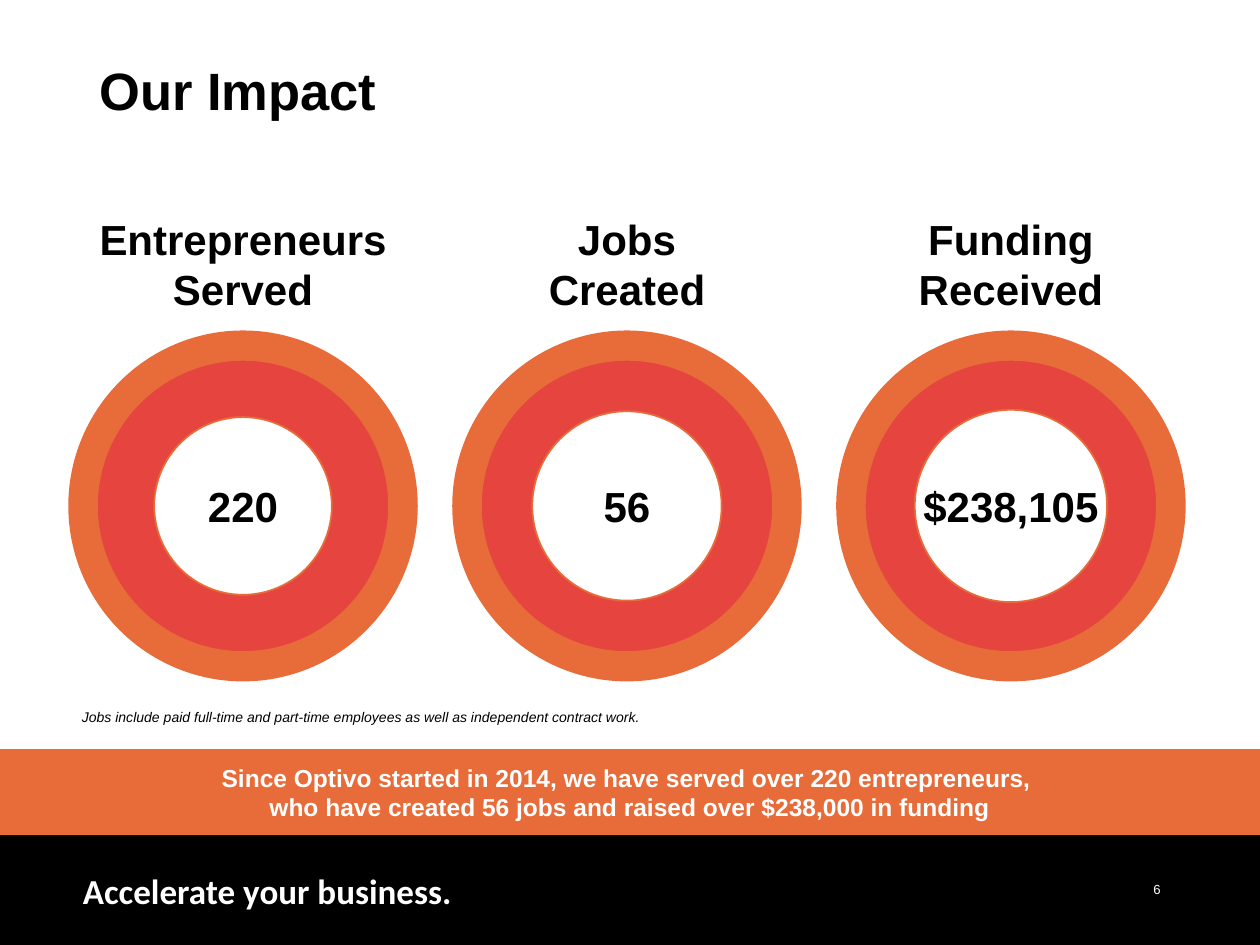
"""Build the "Our Impact" slide with three ring figures."""
from pptx import Presentation
from pptx import util as u
from pptx.dml.color import RGBColor
from pptx.enum import shapes, text

BLACK, WHITE, ORANGE, RED = "000000", "FFFFFF", "E86C39", "E5453E"
LEFT, CENTER, RIGHT = text.PP_ALIGN.LEFT, text.PP_ALIGN.CENTER, text.PP_ALIGN.RIGHT
TOP, MIDDLE = text.MSO_ANCHOR.TOP, text.MSO_ANCHOR.MIDDLE
RECT, DONUT = shapes.MSO_SHAPE.RECTANGLE, shapes.MSO_SHAPE.DONUT


def rgb(value):
    return RGBColor.from_string(value)


class Slide:
    """Hold the style and the current slide."""

    def __init__(self, prs, font="Arial"):
        self.s = prs.slides.add_slide(prs.slide_layouts[5])
        self.font = font

    def add_text(self, tf, lines, size, color=BLACK, align=LEFT, anchor=TOP,
                 bold=False, italic=False, font=None):
        tf.word_wrap = True
        tf.auto_size = text.MSO_AUTO_SIZE.NONE
        tf.vertical_anchor = anchor
        p = tf.paragraphs[0]
        p.alignment = align
        for i, line in enumerate(lines.split("\n")):
            if i:
                p.add_line_break()
            r = p.add_run()
            r.text = line
            r.font.name = font or self.font
            r.font.size = u.Pt(size)
            r.font.bold, r.font.italic = bold, italic
            r.font.color.rgb = rgb(color)
        return p

    def title(self, box, lines):
        sp = self.s.shapes.title
        sp.left, sp.top, sp.width, sp.height = map(u.Cm, box)
        p = self.add_text(sp.text_frame, lines, 30, anchor=MIDDLE, bold=True)
        p.line_spacing = 0.9

    def label(self, box, lines, size, **style):
        sp = self.s.shapes.add_textbox(*map(u.Cm, box))
        self.add_text(sp.text_frame, lines, size, **style)

    def shape(self, kind, box, fill, line):
        sp = self.s.shapes.add_shape(kind, *map(u.Cm, box))
        sp.shadow.inherit = False
        sp.fill.solid()
        sp.fill.fore_color.rgb = rgb(fill)
        sp.line.color.rgb = rgb(line)
        sp.line.width = u.Pt(1)
        return sp

    def band(self, top, height, color, lines=None):
        sp = self.shape(RECT, (0, top, 25.4, height), color, color)
        if lines:
            self.add_text(sp.text_frame, lines, 14, WHITE, CENTER, MIDDLE, bold=True)

    def ring(self, cx, cy, width, height, thickness, fill, value=None):
        box = (cx - width / 2, cy - height / 2, width, height)
        sp = self.shape(DONUT, box, fill, ORANGE)
        sp.adjustments[0] = thickness
        if value:
            tf = sp.text_frame
            tf.margin_left = tf.margin_right = 0
            self.add_text(tf, value, 24, align=CENTER, anchor=MIDDLE, bold=True)


def main():
    prs = Presentation()
    prs.slide_width, prs.slide_height = u.Cm(25.4), u.Cm(19.05)
    slide = Slide(prs)

    slide.band(16.82, 2.23, BLACK)
    slide.label((1.42, 17.4, 8.41, 1.12), "Accelerate your business.", 20,
                color=WHITE, bold=True, font="Calibri")
    slide.title((1.75, 1.02, 17.53, 1.73), "Our Impact")
    slide.label((17.93, 17.65, 5.72, 1.02), "6", 7.5, color=WHITE, align=RIGHT)

    figures = [
        ("Entrepreneurs Served", "220", 0.196),
        ("Jobs\nCreated", "56", 0.176),
        ("Funding Received", "$238,105", 0.171),
    ]
    for i, (name, value, thickness) in enumerate(figures):
        cx, cy = 4.9 + 7.74 * i, 10.2
        slide.ring(cx, cy, 7.01, 7.04, thickness, ORANGE, value)
        slide.ring(cx, cy, 5.89, 5.89, thickness, RED)
        slide.label((cx - 3.26, 4.17, 6.52, 2.31), name, 24, align=CENTER, bold=True)

    slide.band(15.11, 1.71, ORANGE,
               "Since Optivo started in 2014, we have served over 220 entrepreneurs, \n"
               "who have created 56 jobs and raised over $238,000 in funding")
    slide.label((1.4, 14.15, 24, 0.61),
                "Jobs include paid full-time and part-time employees "
                "as well as independent contract work.", 8, italic=True)
    prs.save("out.pptx")


if __name__ == "__main__":
    main()
